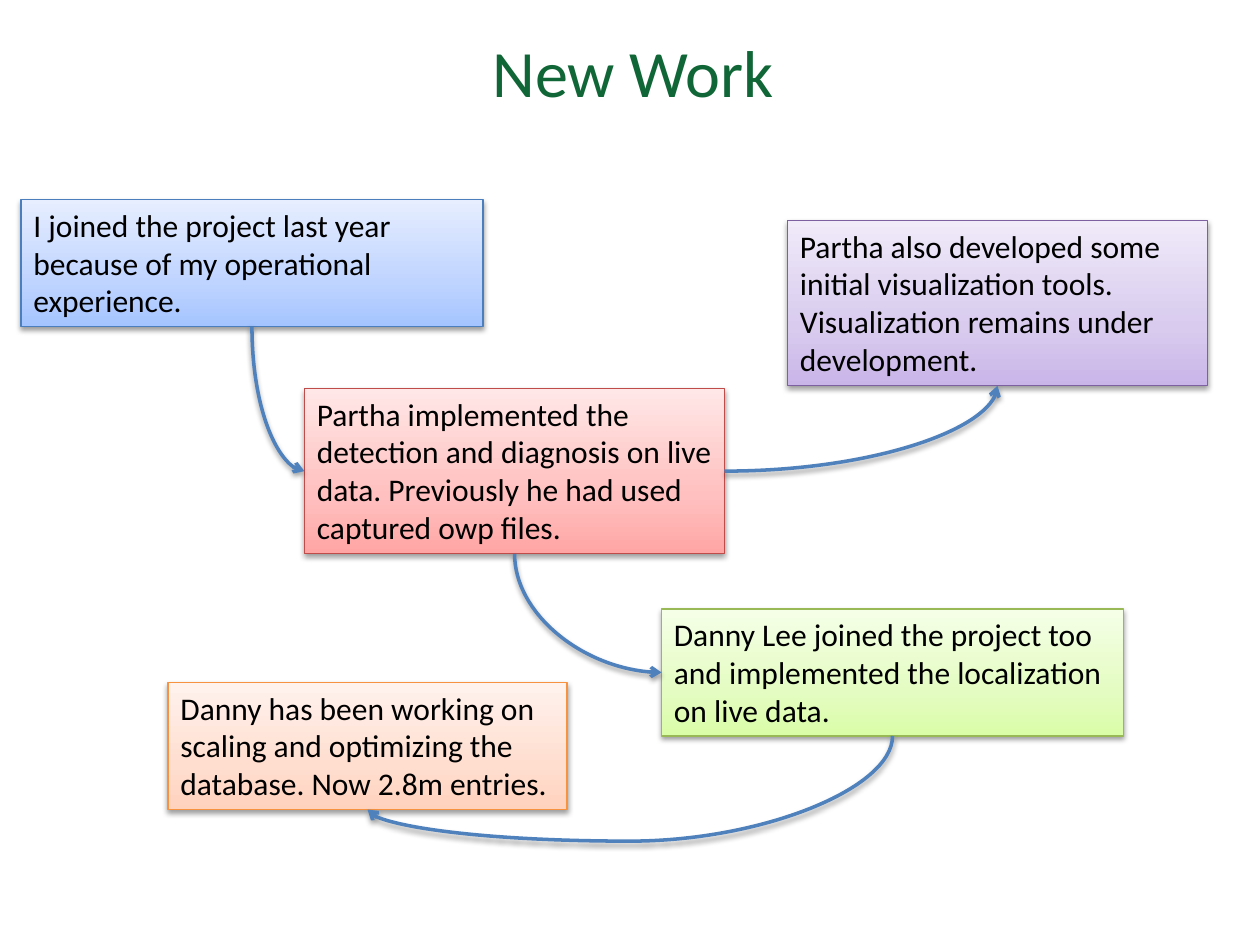
from copy import deepcopy
from math import cos, radians, sin

from lxml import etree
from pptx import Presentation
from pptx.dml.color import RGBColor
from pptx.enum.shapes import MSO_CONNECTOR, MSO_SHAPE
from pptx.enum.text import MSO_ANCHOR, MSO_AUTO_SIZE, PP_ALIGN
from pptx.oxml.ns import qn
from pptx.util import Inches, Pt

CURVE = MSO_CONNECTOR.CURVE
RECTANGLE = MSO_SHAPE.RECTANGLE
TOP = MSO_ANCHOR.TOP
GROW, FIXED = MSO_AUTO_SIZE.SHAPE_TO_FIT_TEXT, MSO_AUTO_SIZE.NONE
LEFT, CENTER = PP_ALIGN.LEFT, PP_ALIGN.CENTER

COLORS = {"title": "106636", "text": "000000", "arrow": "4F81BD", "shadow": "000000"}
PALETTES = {
    "blue": ("4B7EBC", "A4C4FF", "BFD4FF", "E6EEFF"),
    "orange": ("F69240", "FFD2BD", "FFDED0", "FFF2ED"),
    "red": ("BF4C48", "FFA6A5", "FFC0BF", "FFE7E7"),
    "purple": ("7D60A0", "C9B5E8", "D8CBEE", "F0EAF9"),
    "green": ("98B955", "DAFDA7", "E4FCC2", "F5FFE7"),
}
STOPS = (0, 0.35, 1)
SHORT, TALL = 12.1, 15.75


def write(shape, text, size=18, color="text", align=LEFT, autosize=GROW, inset=0.05):
    frame = shape.text_frame
    frame.word_wrap = True
    frame.auto_size = autosize
    frame.vertical_anchor = TOP
    frame.margin_top = Inches(inset)
    paragraph = frame.paragraphs[0]
    paragraph.alignment = align
    run = paragraph.add_run()
    run.text = text
    run.font.size = Pt(size)
    run.font.name = "Calibri"
    run.font.color.rgb = RGBColor.from_string(COLORS[color])


def cast_shadow(effects):
    shadow = etree.SubElement(effects, qn("a:outerShdw"), blurRad="40000",
                              dist="20000", dir="5400000", rotWithShape="0")
    tone = etree.SubElement(shadow, qn("a:srgbClr"), val=COLORS["shadow"])
    etree.SubElement(tone, qn("a:alpha"), val="38000")


def side(box, name):
    column, row, width, height = box
    across, down = {"left": (0, 0.5), "right": (1, 0.5), "bottom": (0.5, 1)}[name]
    return column + width * across, row + height * down


class Deck:
    """Draw one slide on a grid of 120 columns by 90 rows."""

    def __init__(self):
        self.deck = Presentation()
        self.deck.slide_width, self.deck.slide_height = Inches(10), Inches(7.5)
        self.cell = self.deck.slide_width / 120
        self.shapes = self.deck.slides.add_slide(self.deck.slide_layouts[6]).shapes

    def grid(self, *lengths):
        return [round(length * self.cell) for length in lengths]

    def title(self, text, box):
        heading = self.shapes.add_textbox(*self.grid(*box))
        write(heading, text, size=37.8, color="title", align=CENTER,
              autosize=FIXED, inset=0.08)

    def note(self, text, box, palette):
        edge, *tones = PALETTES[palette]
        card = self.shapes.add_shape(RECTANGLE, *self.grid(*box))
        card.shadow.inherit = False
        card.fill.gradient()
        card.fill.gradient_angle = 90
        stop_list = card.element.spPr.find(".//" + qn("a:gsLst"))
        stop_list.append(deepcopy(stop_list[0]))
        for stop, position, tone in zip(card.fill.gradient_stops, STOPS, tones):
            stop.position = position
            stop.color.rgb = RGBColor.from_string(tone)
        card.line.color.rgb = RGBColor.from_string(edge)
        card.line.width = Pt(0.75)
        cast_shadow(card.element.spPr.find(qn("a:effectLst")))
        write(card, text)

    def arrow(self, start, end, turn=0, bend=None):
        (x1, y1), (x2, y2) = start, end
        middle_x, middle_y = (x1 + x2) / 2, (y1 + y2) / 2
        half_x, half_y = (x2 - x1) / 2, (y2 - y1) / 2
        cosine, sine = cos(radians(turn)), sin(radians(turn))
        along = half_x * cosine + half_y * sine
        across = half_y * cosine - half_x * sine
        curve = self.shapes.add_connector(CURVE, *self.grid(
            middle_x - along, middle_y - across, middle_x + along, middle_y + across))
        curve.line.color.rgb = RGBColor.from_string(COLORS["arrow"])
        curve.line.width = Pt(2)
        properties = curve.element.spPr
        properties.find(qn("a:xfrm")).set("rot", str(turn * 60000))
        geometry = properties.find(qn("a:prstGeom"))
        if bend is None:
            geometry.set("prst", "curvedConnector2")
        else:
            etree.SubElement(geometry.find(qn("a:avLst")), qn("a:gd"),
                             name="adj1", fmla=f"val {round(bend * 100000)}")
        etree.SubElement(properties.find(qn("a:ln")), qn("a:tailEnd"), type="arrow")
        cast_shadow(etree.SubElement(properties, qn("a:effectLst")))


def main():
    slide = Deck()
    joining = (2, 19, 44, SHORT)
    scaling = (16, 65, 38, SHORT)
    detection = (29, 37, 40, TALL)
    visualization = (75, 21, 40, TALL)
    localization = (63, 58, 44, SHORT)

    slide.note("I joined the project last year because of my operational experience.",
               joining, "blue")
    slide.title("New Work", (12, 2, 96.6, 7.7))
    slide.note("Danny has been working on scaling and optimizing the database. "
               "Now 2.8m entries.", scaling, "orange")
    slide.note("Partha implemented the detection and diagnosis on live data. "
               "Previously he had used captured owp files.", detection, "red")
    slide.note("Partha also developed some initial visualization tools. "
               "Visualization remains under development.", visualization, "purple")
    slide.note("Danny Lee joined the project too and implemented the localization "
               "on live data.", localization, "green")

    slide.arrow(side(joining, "bottom"), side(detection, "left"), turn=270)
    slide.arrow(side(detection, "right"), side(visualization, "bottom"))
    slide.arrow(side(detection, "bottom"), side(localization, "left"), turn=270)
    slide.arrow(side(localization, "bottom"), side(scaling, "bottom"), turn=90, bend=1.43)
    slide.deck.save("out.pptx")


if __name__ == "__main__":
    main()
